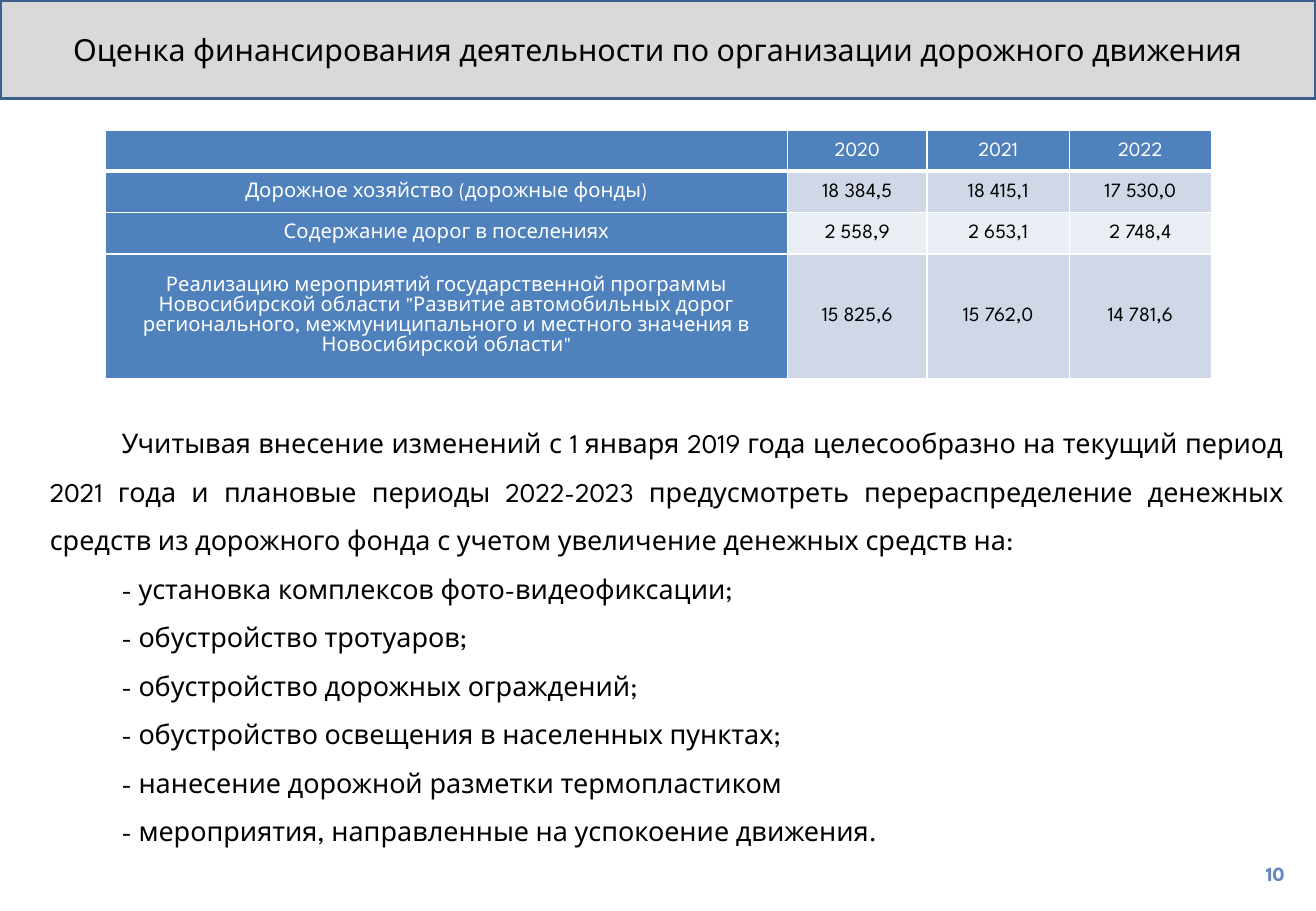
"""Build the slide on funding of road traffic management."""
import pptx
import pptx.util
import pptx.dml.color
import pptx.enum.text
import pptx.oxml
import pptx.oxml.ns

Inch = pptx.util.Inches
Align = pptx.enum.text.PP_ALIGN
Mid = pptx.enum.text.MSO_ANCHOR.MIDDLE
WIDE, HIGH = 10.83, 7.5
BLUE, WHITE, BLACK = "4F81BD", "FFFFFF", "000000"


def tint(text):
    return pptx.dml.color.RGBColor.from_string(text)


def write(frame, text, size=12, color=BLACK, bold=False, align=Align.CENTER, space=1.0):
    frame.word_wrap = True
    frame.auto_size = pptx.enum.text.MSO_AUTO_SIZE.NONE
    frame.text = text
    for para in frame.paragraphs:
        para.alignment = align
        para.line_spacing = space
        para.space_before = pptx.util.Pt(0)
        font = para.runs[0].font
        font.name, font.size, font.bold = "League Spartan", pptx.util.Pt(size), bold
        font.color.rgb = tint(color)


deck = pptx.Presentation()
deck.slide_width, deck.slide_height = Inch(WIDE), Inch(HIGH)
slide = deck.slides.add_slide(deck.slide_layouts[1])
title, body = slide.placeholders

title.left, title.top, title.width, title.height = 0, 0, Inch(WIDE), Inch(0.81)
title.fill.solid()
title.fill.fore_color.rgb = tint("D9D9D9")
title.line.color.rgb = tint("3A5F8C")
title.line.width = pptx.util.Pt(2)
title.text_frame.vertical_anchor = Mid
write(title.text_frame, "Оценка финансирования деятельности по организации дорожного движения", size=18)

rows = [
    ["", "2020", "2021", "2022"],
    ["Дорожное хозяйство (дорожные фонды)", "18 384,5", "18 415,1", "17 530,0"],
    ["Содержание дорог в поселениях", "2 558,9", "2 653,1", "2 748,4"],
    ["Реализацию мероприятий государственной программы Новосибирской области "
     "\"Развитие автомобильных дорог регионального, межмуниципального и местного "
     "значения в Новосибирской области\"", "15 825,6", "15 762,0", "14 781,6"],
]
widths = [5.61, 1.15, 1.17, 1.17]
heights = [0.34, 0.34, 0.34, 1.03]
grid = slide.shapes.add_table(len(rows), len(widths), Inch(0.87), Inch(1.07),
                              Inch(sum(widths)), Inch(sum(heights))).table
for col, width in zip(grid.columns, widths):
    col.width = Inch(width)
for r, row in enumerate(rows):
    grid.rows[r].height = Inch(heights[r])
    for c, text in enumerate(row):
        cell = grid.cell(r, c)
        cell.vertical_anchor = Mid
        cell.margin_left = cell.margin_right = Inch(0.07)
        cell.margin_top = cell.margin_bottom = 0
        head = r == 0 or c == 0
        if text:
            write(cell.text_frame, text, color=WHITE if head else BLACK, space=1.07)
        props = cell._tc.get_or_add_tcPr()
        for side in "LRTB":
            thick = 3 if (r, side) in [(0, "B"), (1, "T")] else 1
            props.append(pptx.oxml.parse_xml(
                f'<a:ln{side} {pptx.oxml.ns.nsdecls("a")} w="{pptx.util.Pt(thick)}">'
                f'<a:solidFill><a:srgbClr val="{WHITE}"/></a:solidFill></a:ln{side}>'))
        cell.fill.solid()
        cell.fill.fore_color.rgb = tint(BLUE if head else "D0D8E8" if r % 2 else "E9EDF4")

items = [
    "Учитывая внесение изменений с 1 января 2019 года целесообразно на текущий период "
    "2021 года и плановые периоды 2022-2023 предусмотреть перераспределение денежных "
    "средств из дорожного фонда с учетом увеличение денежных средств на:",
    "- установка комплексов фото-видеофиксации;",
    "- обустройство тротуаров;",
    "- обустройство дорожных ограждений;",
    "- обустройство освещения в населенных пунктах;",
    "- нанесение дорожной разметки термопластиком",
    "- мероприятия, направленные на успокоение движения.",
]
body.left, body.top, body.width, body.height = map(Inch, (0.31, 3.33, 10.36, 3.84))
write(body.text_frame, "\n".join(items), size=16, align=Align.JUSTIFY, space=1.5)
for para in body.text_frame.paragraphs:
    props = para._p.get_or_add_pPr()
    props.set("marL", "0")
    props.set("indent", str(Inch(0.59)))
    props.append(pptx.oxml.parse_xml(f'<a:buNone {pptx.oxml.ns.nsdecls("a")}/>'))

page = slide.shapes.add_textbox(Inch(8.14), Inch(7.04), Inch(2.53), Inch(0.3)).text_frame
page.vertical_anchor = Mid
write(page, "10", color="6987C3", bold=True, align=Align.RIGHT)

deck.save("out.pptx")
